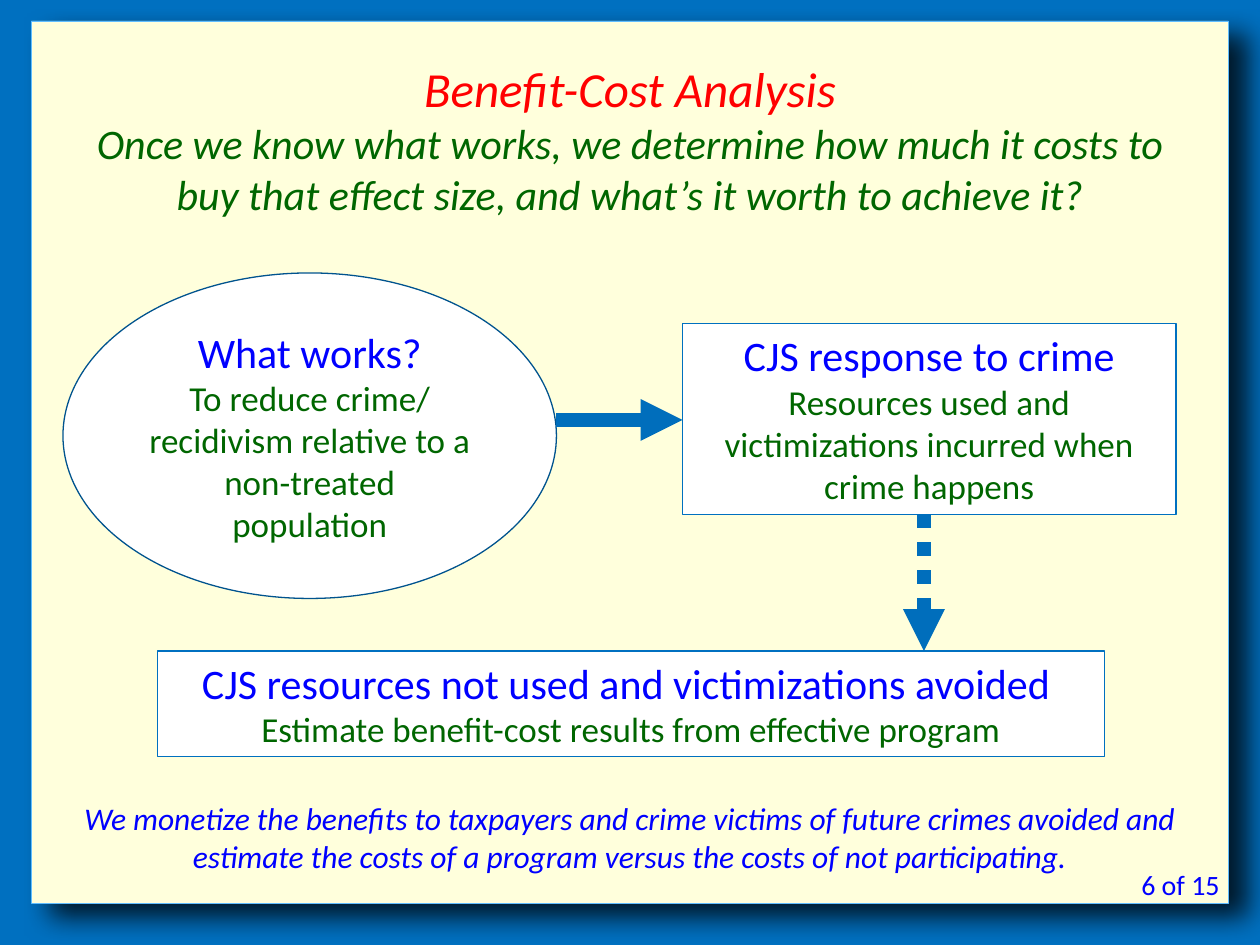
from dataclasses import dataclass
from typing import Optional

from lxml.etree import SubElement
from pptx import Presentation
from pptx.dml.color import RGBColor
from pptx.enum.dml import MSO_LINE
from pptx.enum.shapes import MSO_CONNECTOR, MSO_SHAPE
from pptx.enum.text import MSO_ANCHOR, PP_ALIGN
from pptx.oxml.ns import qn
from pptx.util import Pt

BACKGROUND = RGBColor(0x00, 0x70, 0xC0)
PANEL_FILL = RGBColor(0xFF, 0xFF, 0xDC)
PANEL_LINE = RGBColor(0x60, 0xBD, 0xFF)
ELLIPSE_LINE = RGBColor(0x00, 0x53, 0x8E)
ARROW = RGBColor(0x00, 0x6E, 0xBC)
WHITE = RGBColor(0xFF, 0xFF, 0xFF)
RED = RGBColor(0xFF, 0x00, 0x00)
GREEN = RGBColor(0x00, 0x66, 0x00)
BLUE = RGBColor(0x00, 0x00, 0xFF)
FONT = "Calibri"


@dataclass(frozen=True)
class Box:
    left: float
    top: float
    width: float
    height: float

    def lengths(self) -> tuple:
        return Pt(self.left), Pt(self.top), Pt(self.width), Pt(self.height)


@dataclass(frozen=True)
class Line:
    text: str
    size: float
    color: RGBColor
    italic: bool = False


@dataclass(frozen=True)
class Step:
    preset: MSO_SHAPE
    box: Box
    heading: str
    detail: str
    outline: RGBColor = BACKGROUND
    anchor: MSO_ANCHOR = MSO_ANCHOR.TOP


@dataclass(frozen=True)
class Arrow:
    start: tuple[float, float]
    end: tuple[float, float]
    dash: Optional[MSO_LINE] = None


STEPS = [
    Step(MSO_SHAPE.RECTANGLE, Box(390, 185, 282, 109), "CJS response to crime",
         "Resources used and victimizations incurred when crime happens"),
    Step(MSO_SHAPE.RECTANGLE, Box(90, 372, 541, 60.5),
         "CJS resources not used and victimizations avoided ",
         "Estimate benefit-cost results from effective program"),
    Step(MSO_SHAPE.OVAL, Box(36, 156, 282, 186), "What works?",
         "To reduce crime/ recidivism relative to a non-treated population",
         ELLIPSE_LINE, MSO_ANCHOR.MIDDLE),
]
ARROWS = [
    Arrow((318, 240), (390, 240)),
    Arrow((528, 294), (528, 372), MSO_LINE.ROUND_DOT),
]


def write(shape, lines: list[Line], align: PP_ALIGN = PP_ALIGN.CENTER,
          anchor: MSO_ANCHOR = MSO_ANCHOR.TOP) -> None:
    frame = shape.text_frame
    frame.word_wrap = True
    frame.vertical_anchor = anchor
    for index, line in enumerate(lines):
        paragraph = frame.add_paragraph() if index else frame.paragraphs[0]
        paragraph.alignment = align
        run = paragraph.add_run()
        run.text = line.text
        run.font.name = FONT
        run.font.size = Pt(line.size)
        run.font.italic = line.italic
        run.font.color.rgb = line.color


def add_filled(slide, preset: MSO_SHAPE, box: Box, fill: RGBColor,
               outline: RGBColor, width: float):
    shape = slide.shapes.add_shape(preset, *box.lengths())
    shape.shadow.inherit = False
    shape.fill.solid()
    shape.fill.fore_color.rgb = fill
    shape.line.color.rgb = outline
    shape.line.width = Pt(width)
    return shape


def add_panel(slide) -> None:
    panel = add_filled(slide, MSO_SHAPE.RECTANGLE, Box(18, 12, 684, 504),
                       PANEL_FILL, PANEL_LINE, 0.05)
    effects = panel._element.spPr.find(qn("a:effectLst"))
    shadow = SubElement(effects, qn("a:outerShdw"), blurRad=str(Pt(15)),
                        dist=str(Pt(14)), dir=str(36 * 60000),
                        algn="tl", rotWithShape="0")
    color = SubElement(shadow, qn("a:srgbClr"), val="000000")
    SubElement(color, qn("a:alpha"), val="79000")
    # The panel lies behind the title placeholder
    slide.shapes._spTree.insert(2, panel._element)


def add_step(slide, step: Step) -> None:
    shape = add_filled(slide, step.preset, step.box, WHITE, step.outline, 0.75)
    write(shape, [Line(step.heading, 24, BLUE), Line(step.detail, 20, GREEN)],
          anchor=step.anchor)


def add_arrow(slide, arrow: Arrow) -> None:
    points = [Pt(value) for value in (*arrow.start, *arrow.end)]
    connector = slide.shapes.add_connector(MSO_CONNECTOR.STRAIGHT, *points)
    connector.line.color.rgb = ARROW
    connector.line.width = Pt(8)
    if arrow.dash is not None:
        connector.line.dash_style = arrow.dash
    SubElement(connector.line._get_or_add_ln(), qn("a:tailEnd"), type="triangle")
    SubElement(connector._element.spPr, qn("a:effectLst"))


def add_text(slide, box: Box, line: Line, align: PP_ALIGN) -> None:
    write(slide.shapes.add_textbox(*box.lengths()), [line], align)


def main() -> None:
    presentation = Presentation()
    presentation.slide_width, presentation.slide_height = Pt(720), Pt(540)
    slide = presentation.slides.add_slide(presentation.slide_layouts[5])
    slide.background.fill.solid()
    slide.background.fill.fore_color.rgb = BACKGROUND
    add_panel(slide)

    # Title and lead question
    title = slide.shapes.title
    title.left, title.top, title.width, title.height = Box(48, 30, 624, 200).lengths()
    write(title, [
        Line("Benefit-Cost Analysis", 28, RED, True),
        Line("Once we know what works, we determine how much it costs to buy "
             "that effect size, and what’s it worth to achieve it?", 24, GREEN, True),
    ])

    # Closing remark and page number
    add_text(slide, Box(24, 453, 672, 51),
             Line("We monetize the benefits to taxpayers and crime victims of future "
                  "crimes avoided and estimate the costs of a program versus the "
                  "costs of not participating.", 18, BLUE, True), PP_ALIGN.CENTER)
    add_text(slide, Box(606, 492, 98, 27), Line("6 of 15", 16, BLUE), PP_ALIGN.RIGHT)

    # Flow diagram
    for step in STEPS:
        add_step(slide, step)
    for arrow in ARROWS:
        add_arrow(slide, arrow)

    presentation.save("out.pptx")


if __name__ == "__main__":
    main()
